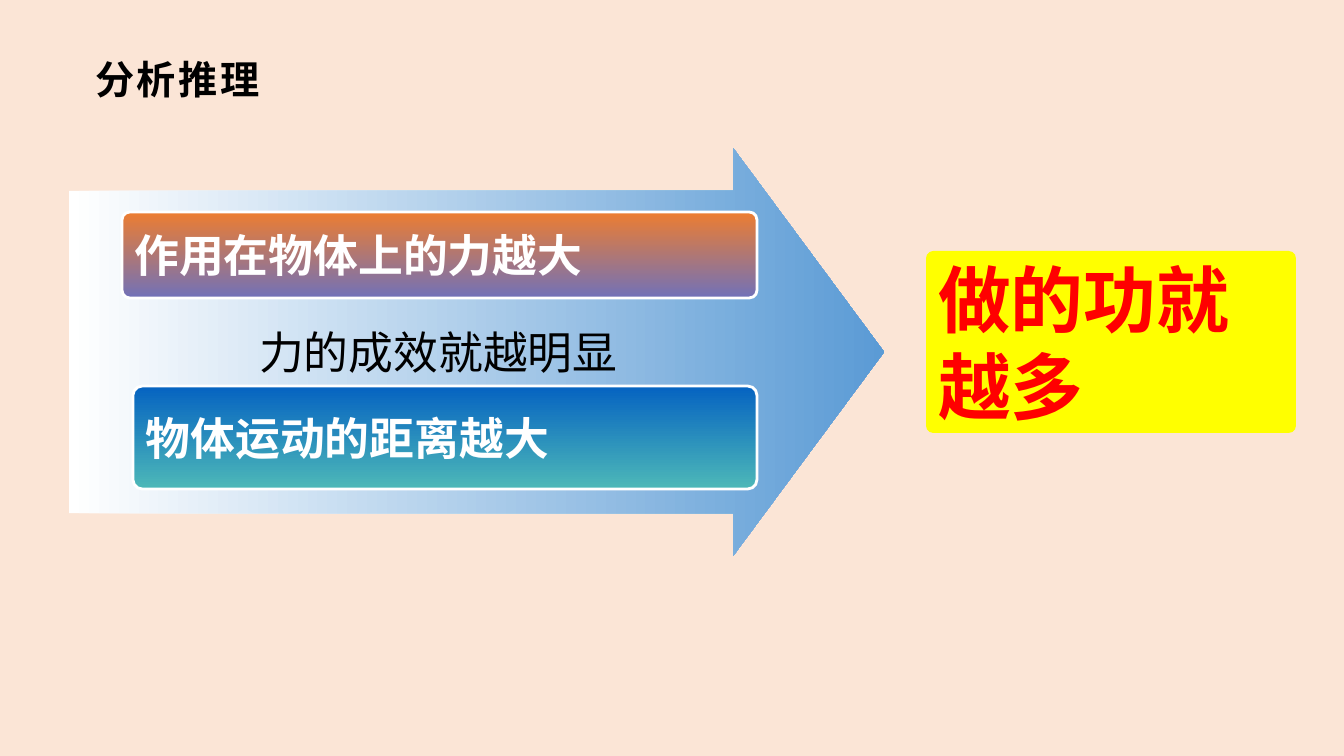
from pptx import Presentation
from pptx.dml.color import RGBColor
from pptx.enum.shapes import MSO_SHAPE as Shape
from pptx.enum.text import MSO_ANCHOR as Anchor, MSO_AUTO_SIZE as AutoSize, PP_ALIGN as Align
from pptx.util import Pt

PX = 914400 / 100.8
FONT = "Arial"
COLORS = {
    "background": "FBE5D6", "black": "000000", "white": "FFFFFF",
    "arrow": "5B9BD5", "orange": "ED7D31", "violet": "7171B8",
    "blue": "0563C1", "teal": "4DB8B8", "yellow": "FFFF00", "red": "FF0000",
}


def px(length):
    return round(length * PX)


def color(name):
    return RGBColor.from_string(COLORS[name])


def write(frame, text, size, ink, bold=True, left=10):
    frame.word_wrap = True
    frame.auto_size = AutoSize.NONE
    frame.vertical_anchor = Anchor.MIDDLE
    frame.margin_left, frame.margin_right = px(left), px(10)
    frame.margin_top = frame.margin_bottom = px(4)
    paragraph = frame.paragraphs[0]
    paragraph.text = text
    paragraph.alignment = Align.LEFT
    font = paragraph.font
    font.name, font.size, font.bold = FONT, Pt(size), bold
    font.color.rgb = color(ink)
    return paragraph


def add_block(slide, preset, box, adjustments, fills, angle=0, outline=None):
    """One fill name gives a solid fill, two give a gradient."""
    block = slide.shapes.add_shape(preset, *map(px, box))
    block.shadow.inherit = False
    for index, value in enumerate(adjustments):
        block.adjustments[index] = value
    if len(fills) == 1:
        block.fill.solid()
        block.fill.fore_color.rgb = color(fills[0])
    else:
        block.fill.gradient()
        block.fill.gradient_angle = angle
        for stop, name in zip(block.fill.gradient_stops, fills):
            stop.color.rgb = color(name)
    if outline:
        block.line.color.rgb = color(outline)
        block.line.width = Pt(2)
    else:
        block.line.fill.background()
    return block


def add_title(slide, text):
    title = slide.shapes.title
    title.left, title.top, title.width, title.height = map(px, (84, 39, 1204, 80))
    paragraph = write(title.text_frame, text, 28, "black", left=11)
    paragraph.runs[0]._r.get_or_add_rPr().set("spc", "200")


def main():
    deck = Presentation()
    deck.slide_width, deck.slide_height = px(1344), px(756)
    slide = deck.slides.add_slide(deck.slide_layouts[5])
    slide.background.fill.solid()
    slide.background.fill.fore_color.rgb = color("background")
    add_title(slide, "分析推理")

    # Arrow from the causes to the result
    arrow = add_block(slide, Shape.RIGHT_ARROW, (69, 148, 815, 408),
                      (0.79, 0.37), ("white", "arrow"))
    write(arrow.text_frame, "力的成效就越明显", 32, "black", bold=False, left=190)

    # The two causes
    causes = [
        ("作用在物体上的力越大", (122, 212, 635, 86), ("orange", "violet")),
        ("物体运动的距离越大", (133, 386, 624, 103), ("blue", "teal")),
    ]
    for text, box, fills in causes:
        cause = add_block(slide, Shape.ROUNDED_RECTANGLE, box, (0.09,), fills,
                          angle=270, outline="white")
        write(cause.text_frame, text, 32, "white")

    # The result
    result = add_block(slide, Shape.ROUNDED_RECTANGLE, (926, 251, 370, 182),
                       (0.04,), ("yellow",))
    write(result.text_frame, "做的功就越多", 52, "red")

    deck.save("out.pptx")


if __name__ == "__main__":
    main()
